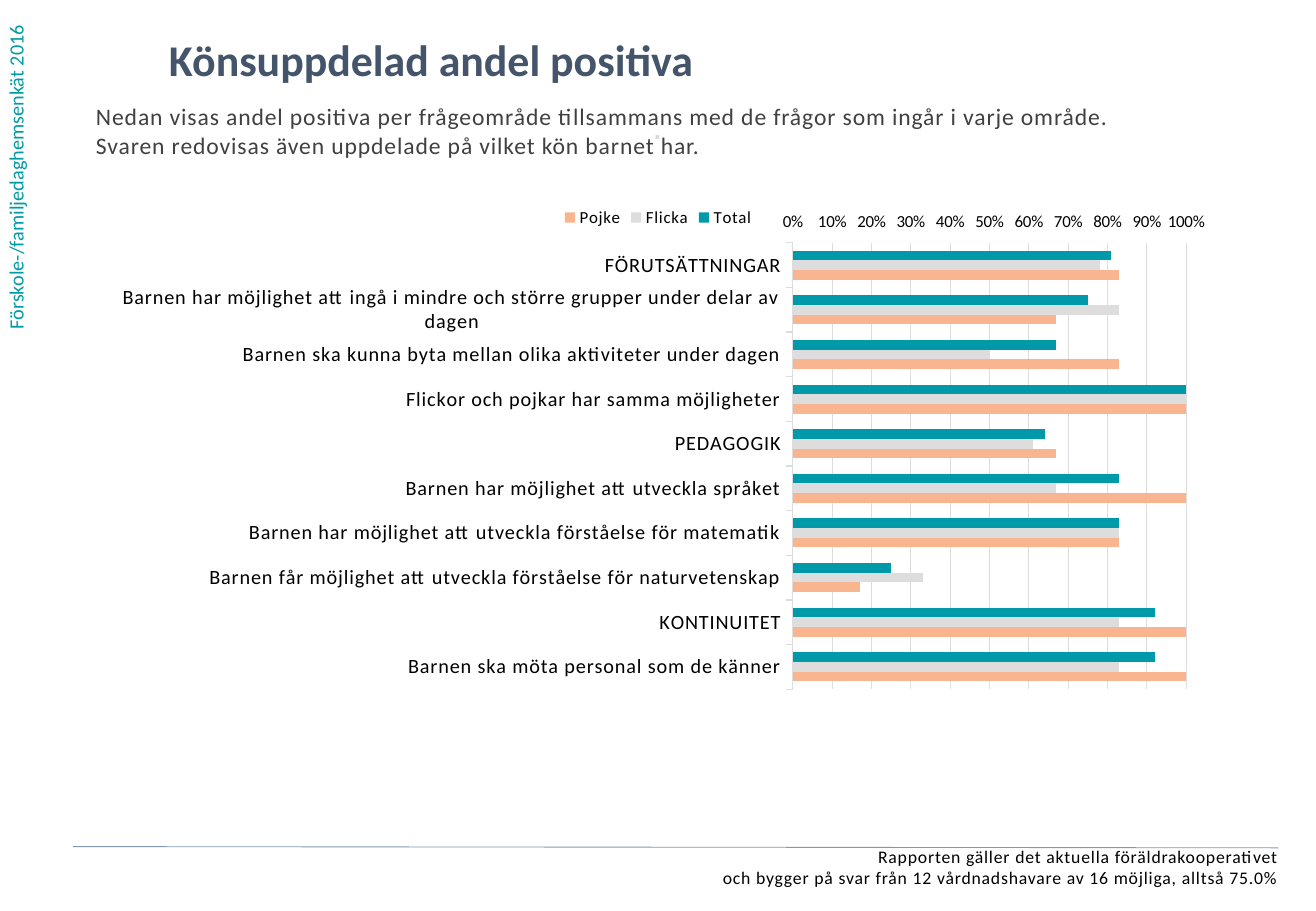
from dataclasses import dataclass

from lxml import etree
from pptx import Presentation
from pptx.chart.chart import Chart
from pptx.chart.data import CategoryChartData
from pptx.dml.color import RGBColor
from pptx.enum.chart import (XL_AXIS_CROSSES, XL_CHART_TYPE,
                             XL_LEGEND_POSITION, XL_TICK_MARK)
from pptx.enum.shapes import MSO_CONNECTOR
from pptx.enum.text import PP_ALIGN
from pptx.oxml import parse_xml
from pptx.oxml.ns import nsdecls, qn
from pptx.slide import Slide
from pptx.util import Inches, Pt

BAR_CLUSTERED = XL_CHART_TYPE.BAR_CLUSTERED
LEGEND_TOP = XL_LEGEND_POSITION.TOP
CROSS_MAXIMUM = XL_AXIS_CROSSES.MAXIMUM
TICK_OUTSIDE = XL_TICK_MARK.OUTSIDE
STRAIGHT = MSO_CONNECTOR.STRAIGHT
LEFT, CENTER, RIGHT = PP_ALIGN.LEFT, PP_ALIGN.CENTER, PP_ALIGN.RIGHT

TEAL = RGBColor(0x00, 0x9B, 0xA4)
SLATE = RGBColor(0x44, 0x54, 0x6A)
DARK_GREY = RGBColor(0x40, 0x40, 0x40)
BLACK = RGBColor(0x00, 0x00, 0x00)
PALE_BLUE = RGBColor(0xD2, 0xD9, 0xE2)
RULE_BLUE = RGBColor(0x84, 0x97, 0xB0)
TOTAL_TEAL = RGBColor(0x00, 0x99, 0xAA)
LIGHT_GREY = RGBColor(0xDD, 0xDD, 0xDD)
PEACH = RGBColor(0xF9, 0xB5, 0x90)

FONT = "Calibri"
SPACING = "50"


@dataclass(frozen=True)
class Label:
    lines: tuple[str, ...]
    left: float
    top: float
    width: float
    height: float
    size: float
    color: RGBColor
    bold: bool = False
    spaced: bool = True
    align: PP_ALIGN = LEFT
    vertical: bool = False


@dataclass(frozen=True)
class Group:
    name: str
    values: tuple[float, ...]
    color: RGBColor


LABELS = (
    Label(("Förskole-/familjedaghemsenkät 2016",), -0.02, 0, 0.4, 2.81,
          12, TEAL, spaced=False, vertical=True),
    Label(("Könsuppdelad andel positiva",), 1.39, 0.27, 8.34, 0.57,
          26, SLATE, bold=True, spaced=False),
    Label(("Nedan visas andel positiva per frågeområde tillsammans med "
           "de frågor som ingår i varje område.",
           "Svaren redovisas även uppdelade på vilket kön barnet har."),
          0.79, 0.84, 9.46, 1.01, 14, DARK_GREY),
    Label(("Rapporten gäller det aktuella föräldrakooperativet",
           "och bygger på svar från 12 vårdnadshavare av 16 möjliga, "
           "alltså 75.0%"),
          0.12, 6.96, 10.4, 0.43, 10.5, BLACK, align=RIGHT),
    Label(("⋅",), 3.87, 1.02, 3.08, 0.39, 12, PALE_BLUE,
          bold=True, align=CENTER),
)

QUESTIONS = (
    "FÖRUTSÄTTNINGAR",
    "Barnen har möjlighet att ingå i mindre och större grupper under delar av dagen",
    "Barnen ska kunna byta mellan olika aktiviteter under dagen",
    "Flickor och pojkar har samma möjligheter",
    "PEDAGOGIK",
    "Barnen har möjlighet att utveckla språket",
    "Barnen har möjlighet att utveckla förståelse för matematik",
    "Barnen får möjlighet att utveckla förståelse för naturvetenskap",
    "KONTINUITET",
    "Barnen ska möta personal som de känner",
)

GROUPS = (
    Group("Total", (0.81, 0.75, 0.67, 1, 0.64, 0.83, 0.83, 0.25, 0.92, 0.92), TOTAL_TEAL),
    Group("Flicka", (0.78, 0.83, 0.5, 1, 0.61, 0.67, 0.83, 0.33, 0.83, 0.83), LIGHT_GREY),
    Group("Pojke", (0.83, 0.67, 0.83, 1, 0.67, 1, 0.83, 0.17, 1, 1), PEACH),
)

PLOT_LAYOUT = {"x": 0.62, "y": 0.09, "w": 0.35, "h": 0.83}


def add_label(page: Slide, label: Label) -> None:
    box = page.shapes.add_textbox(Inches(label.left), Inches(label.top),
                                  Inches(label.width), Inches(label.height))
    frame = box.text_frame
    frame.word_wrap = True
    if label.vertical:
        frame._txBody.bodyPr.set("vert", "vert270")
    else:
        frame.margin_left = frame.margin_right = 0
        frame.margin_top = frame.margin_bottom = 0
    for index, line in enumerate(label.lines):
        para = frame.add_paragraph() if index else frame.paragraphs[0]
        para.alignment = label.align
        span = para.add_run()
        span.text = line
        span.font.name = FONT
        span.font.size = Pt(label.size)
        span.font.bold = label.bold
        span.font.color.rgb = label.color
        if label.spaced:
            span._r.get_or_add_rPr().set("spc", SPACING)


def set_plot_layout(chart: Chart) -> None:
    plot_area = chart._chartSpace.chart.plotArea
    for old_layout in plot_area.findall(qn("c:layout")):
        plot_area.remove(old_layout)
    layout = parse_xml(f"<c:layout {nsdecls('c')}/>")
    manual = etree.SubElement(layout, qn("c:manualLayout"))
    settings = {"layoutTarget": "inner", "xMode": "edge", "yMode": "edge", **PLOT_LAYOUT}
    for tag, value in settings.items():
        etree.SubElement(manual, qn(f"c:{tag}")).set("val", str(value))
    plot_area.insert(0, layout)


def add_survey_chart(page: Slide) -> None:
    data = CategoryChartData(number_format="0%")
    data.categories = QUESTIONS
    for group in GROUPS:
        data.add_series(group.name, group.values)
    chart = page.shapes.add_chart(BAR_CLUSTERED, Inches(0.79), Inches(1.6),
                                  Inches(9.25), Inches(4.43), data).chart
    chart.has_title = False
    chart.font.name = FONT
    chart.font.size = Pt(10)
    chart.font.color.rgb = BLACK

    chart.has_legend = True
    chart.legend.position = LEGEND_TOP
    chart.legend.include_in_layout = False
    chart.legend.font.size = Pt(10)

    plot = chart.plots[0]
    plot.gap_width = 162
    plot.overlap = 0
    plot.vary_by_categories = False
    for series, group in zip(plot.series, GROUPS):
        series.format.fill.solid()
        series.format.fill.fore_color.rgb = group.color
        series.invert_if_negative = False

    questions = chart.category_axis
    questions.reverse_order = True
    questions.crosses = CROSS_MAXIMUM
    questions.major_tick_mark = TICK_OUTSIDE
    questions.tick_labels.font.size = Pt(12)
    questions.format.line.color.rgb = LIGHT_GREY
    questions.format.line.width = Pt(0.75)

    shares = chart.value_axis
    shares.minimum_scale = 0
    shares.maximum_scale = 1
    shares.major_unit = 0.1
    shares.major_tick_mark = TICK_OUTSIDE
    shares.format.line.fill.background()
    shares.major_gridlines.format.line.color.rgb = LIGHT_GREY
    shares.major_gridlines.format.line.width = Pt(0.75)
    shares.tick_labels.font.size = Pt(10)
    shares.tick_labels.number_format = "0%;0%"
    shares.tick_labels.number_format_is_linked = False

    for part in (questions, chart.legend):
        for properties in part._element.iter(qn("a:defRPr")):
            properties.set("spc", SPACING)
    set_plot_layout(chart)


def add_footer_rule(page: Slide) -> None:
    rule = page.shapes.add_connector(STRAIGHT, Inches(0.6), Inches(6.97),
                                     Inches(10.52), Inches(6.98))
    rule.line.color.rgb = RULE_BLUE
    rule.line.width = Pt(0.5)
    etree.SubElement(rule._element.spPr, qn("a:effectLst"))


def main() -> None:
    deck = Presentation()
    deck.slide_width = Inches(10.83)
    deck.slide_height = Inches(7.5)
    page = deck.slides.add_slide(deck.slide_layouts[6])
    for label in LABELS:
        add_label(page, label)
    add_survey_chart(page)
    add_footer_rule(page)
    deck.save("out.pptx")


if __name__ == "__main__":
    main()
